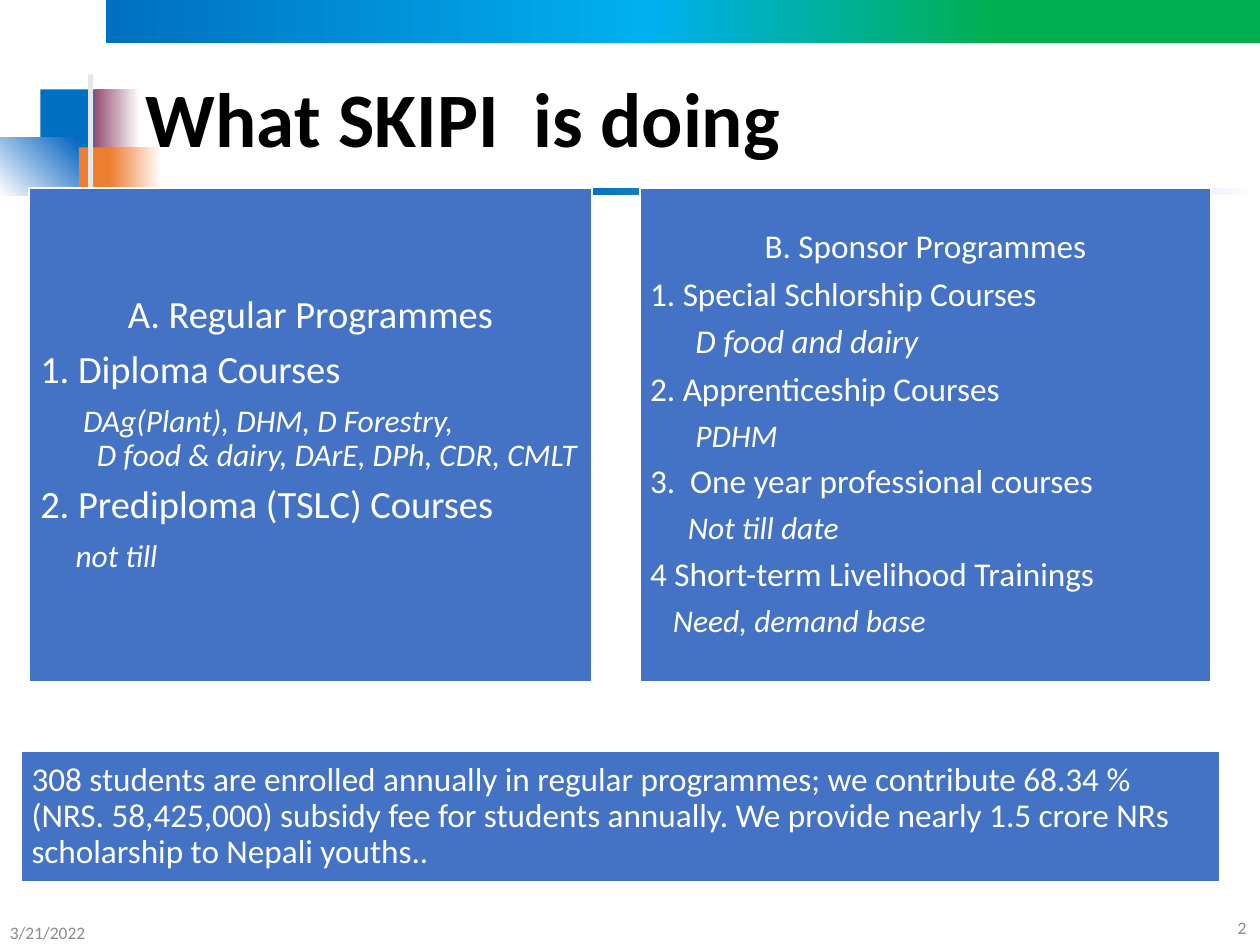
"""Build the slide on SKIPI's regular and sponsored programmes."""
from lxml import etree
from pptx import Presentation
from pptx.dml.color import RGBColor
from pptx.enum.shapes import MSO_SHAPE
from pptx.enum.text import MSO_ANCHOR, PP_ALIGN
from pptx.oxml.ns import qn
from pptx.util import Inches, Pt

RECTANGLE = MSO_SHAPE.RECTANGLE
MIDDLE = MSO_ANCHOR.MIDDLE
LEFT, CENTER, RIGHT = PP_ALIGN.LEFT, PP_ALIGN.CENTER, PP_ALIGN.RIGHT

BLACK = RGBColor(0x00, 0x00, 0x00)
WHITE = RGBColor(0xFF, 0xFF, 0xFF)
BLUE = RGBColor(0x00, 0x70, 0xC0)
SKY = RGBColor(0x00, 0xB0, 0xF0)
GREEN = RGBColor(0x00, 0xB0, 0x50)
PLUM = RGBColor(0x95, 0x4F, 0x72)
ORANGE = RGBColor(0xED, 0x7D, 0x31)
LINK_BLUE = RGBColor(0x05, 0x63, 0xC1)
PALE_GREY = RGBColor(0xE7, 0xE6, 0xE6)
PANEL_BLUE = RGBColor(0x44, 0x72, 0xC4)
DATE_GREY = RGBColor(0x8C, 0x8C, 0x8C)
NUMBER_GREY = RGBColor(0x89, 0x89, 0x89)

prs = Presentation()
prs.slide_width, prs.slide_height = Inches(10), Inches(7.5)
slide = prs.slides.add_slide(prs.slide_layouts[6])


def add_block(box, stops, angle=0):
    block = slide.shapes.add_shape(RECTANGLE, *map(Inches, box))
    block.shadow.inherit = False
    block.line.fill.background()
    if len(stops) == 1:
        block.fill.solid()
        block.fill.fore_color.rgb = stops[0][1]
        return block
    block.fill.gradient()
    block.fill.gradient_angle = angle
    stop_list = next(block._element.iter(qn("a:gsLst")))
    for old_stop in list(stop_list):
        stop_list.remove(old_stop)
    for position, color in stops:
        stop = etree.SubElement(stop_list, qn("a:gs"), pos=str(position * 1000))
        etree.SubElement(stop, qn("a:srgbClr"), val=str(color))
    return block


def write_lines(frame, lines, margin, color, spacing=0.9, after=0.35, bold=False):
    frame.word_wrap = True
    frame.vertical_anchor = MIDDLE
    for side in ("left", "right", "top", "bottom"):
        setattr(frame, f"margin_{side}", Inches(margin))
    for index, (text, size, italic, align, indent, first) in enumerate(lines):
        paragraph = frame.paragraphs[0] if index == 0 else frame.add_paragraph()
        paragraph.text = text
        paragraph_format = {"alignment": align, "line_spacing": spacing,
                            "space_after": Pt(round(size * after, 1))}
        for name, value in paragraph_format.items():
            setattr(paragraph, name, value)
        properties = paragraph._p.get_or_add_pPr()
        properties.set("marL", str(Inches(indent)))
        properties.set("indent", str(Inches(first)))
        font_format = {"name": "Calibri", "size": Pt(size), "bold": bold, "italic": italic}
        for run in paragraph.runs:
            for name, value in font_format.items():
                setattr(run.font, name, value)
            run.font.color.rgb = color


decorations = [
    ((0.84, -0.01, 9.16, 0.35), [(0, BLUE), (47, SKY), (77, GREEN)], 0),
    ((0.32, 0.71, 0.48, 0.52), [(0, BLUE)], 0),
    ((0.75, 0.71, 0.36, 0.52), [(0, PLUM), (100, WHITE)], 0),
    ((0.46, 1.17, 0.47, 0.52), [(0, ORANGE)], 0),
    ((0.87, 1.17, 0.41, 0.52), [(0, ORANGE), (100, WHITE)], 0),
    ((0, 1.09, 0.62, 0.46), [(0, WHITE), (100, LINK_BLUE)], 45),
    ((0.7, 0.59, 0.04, 1.15), [(0, PALE_GREY)], 0),
    ((0.35, 1.49, 9.65, 0.06), [(0, BLUE), (44, BLUE), (100, WHITE)], 0),
]
for box, stops, angle in decorations:
    add_block(box, stops, angle)

title = slide.shapes.add_textbox(*map(Inches, (1.06, 0.25, 8.62, 1.45)))
write_lines(title.text_frame, [("What SKIPI  is doing", 44, False, LEFT, 0, 0)],
            0.1, BLACK, after=0, bold=True)

regular = [
    ("A. Regular Programmes", 22, False, CENTER, 0, 0),
    ("1. Diploma Courses", 22, False, LEFT, 0, 0),
    ("DAg(Plant), DHM, D Forestry,\vD food & dairy, DArE, DPh, CDR, CMLT",
     18, True, LEFT, 0.45, -0.11),
    ("2. Prediploma (TSLC) Courses", 22, False, LEFT, 0, 0),
    ("not till", 18, True, LEFT, 0.28, 0),
]
sponsored = [
    ("B. Sponsor Programmes", 19, False, CENTER, 0, 0),
    ("1. Special Schlorship Courses", 19, False, LEFT, 0, 0),
    ("D food and dairy", 19, True, LEFT, 0.36, 0),
    ("2. Apprenticeship Courses", 19, False, LEFT, 0, 0),
    ("PDHM", 18, True, LEFT, 0.36, 0),
    ("3.  One year professional courses", 19, False, LEFT, 0, 0),
    ("Not till date", 18, True, LEFT, 0.3, 0),
    ("4 Short-term Livelihood Trainings", 19, False, LEFT, 0, 0),
    ("Need, demand base", 18, True, LEFT, 0.18, 0),
]
enrolment = [
    ("308 students are enrolled annually in regular programmes; we contribute 68.34 % "
     "(NRS. 58,425,000) subsidy fee for students annually. We provide nearly 1.5 crore NRs "
     "scholarship to Nepali youths..", 19, False, LEFT, 0, 0),
]
panels = [
    ((0.23, 1.49, 4.47, 3.92), regular, 0.09),
    ((5.08, 1.49, 4.53, 3.92), sponsored, 0.08),
    ((0.17, 5.96, 9.51, 1.04), enrolment, 0.08),
]
for box, lines, margin in panels:
    panel = add_block(box, [(0, PANEL_BLUE)])
    panel.line.color.rgb = WHITE
    panel.line.width = Pt(1)
    write_lines(panel.text_frame, lines, margin, WHITE)

footers = [
    ((-0.02, 7.2, 2.25, 0.4), "3/21/2022", LEFT, DATE_GREY),
    ((7.74, 7.16, 2.25, 0.4), "2", RIGHT, NUMBER_GREY),
]
for box, text, align, color in footers:
    footer = slide.shapes.add_textbox(*map(Inches, box))
    write_lines(footer.text_frame, [(text, 10, False, align, 0, 0)],
                0.1, color, spacing=1.0, after=0)

prs.save("out.pptx")
